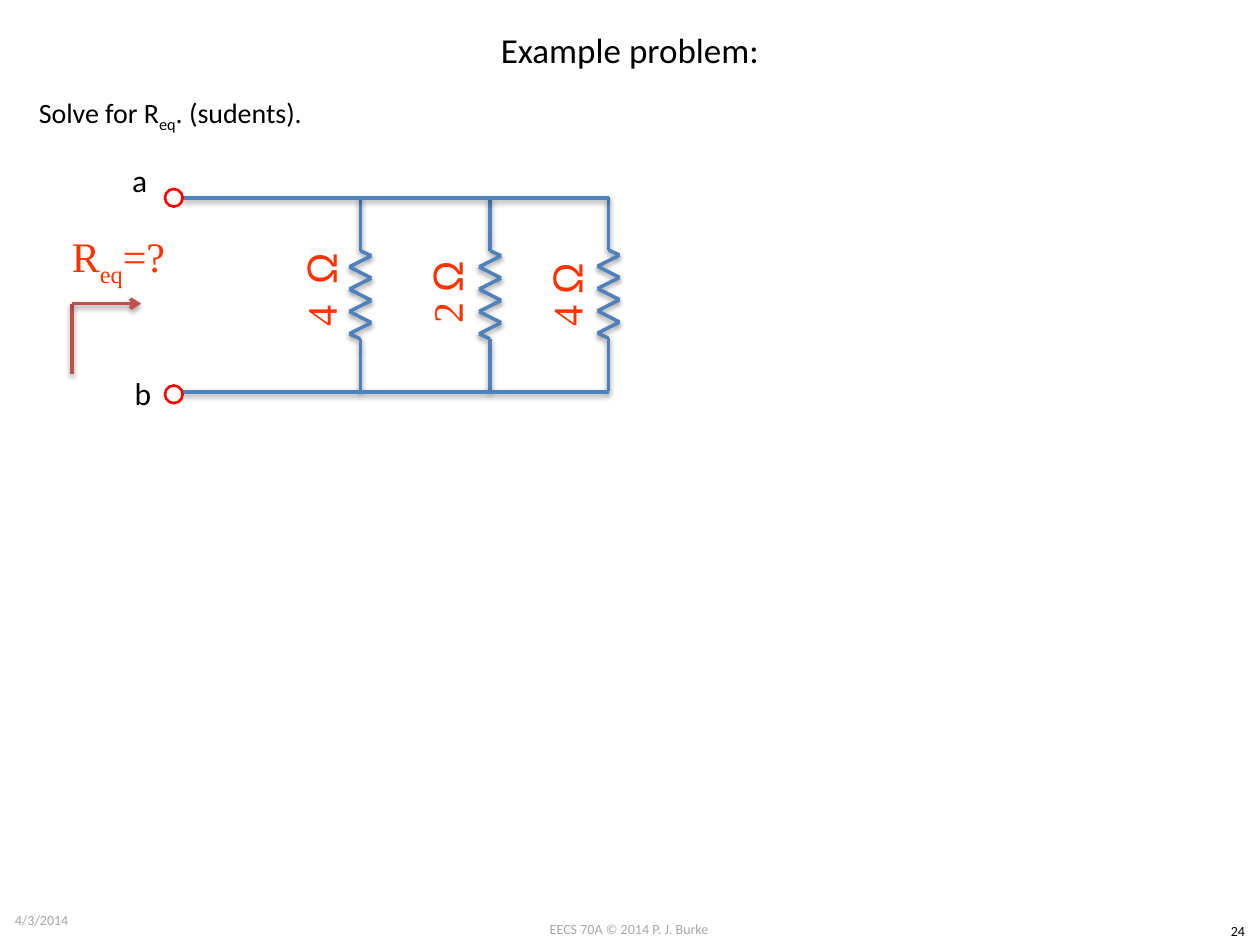
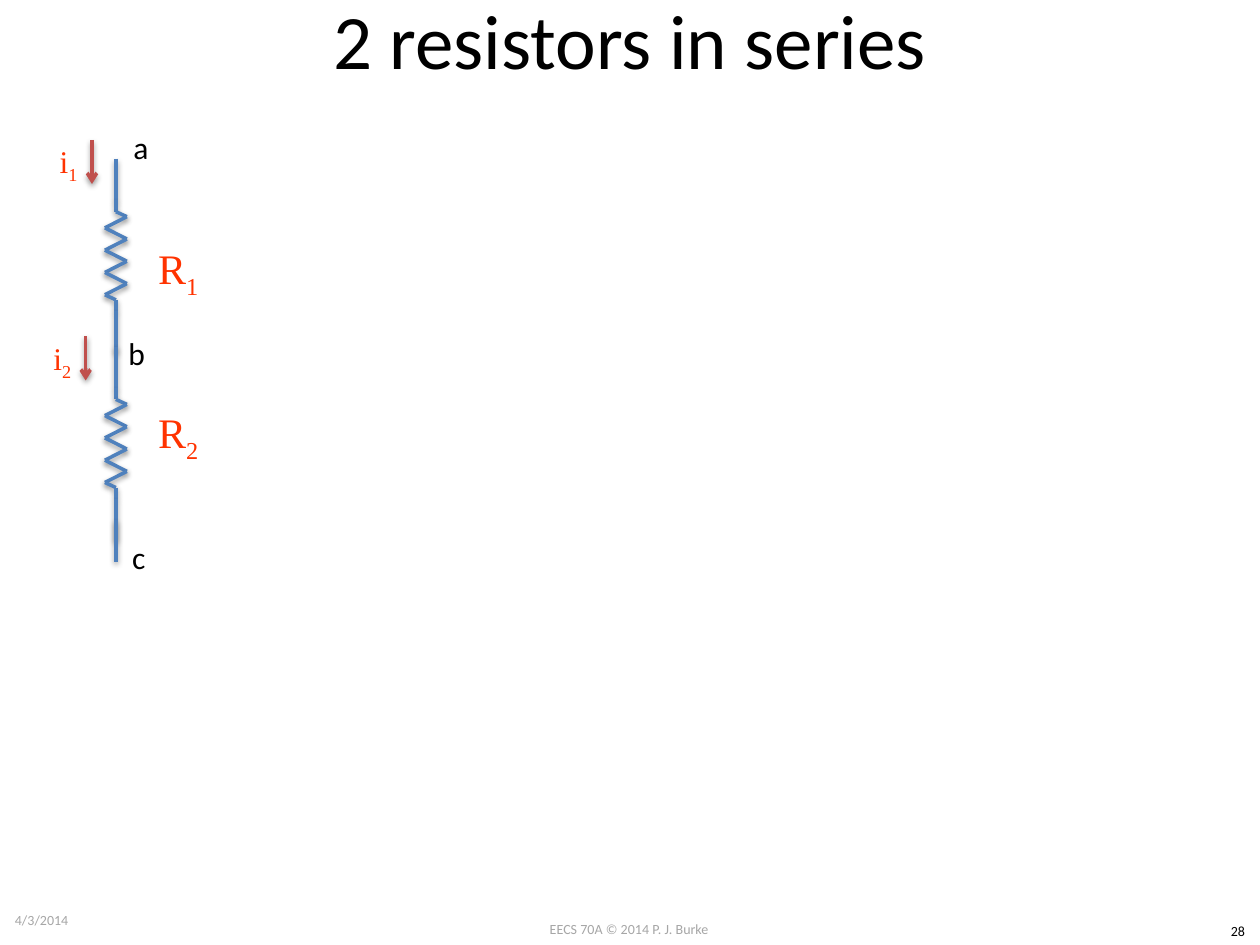
import pptx
import pptx.util
import pptx.dml.color
import pptx.enum.shapes
import pptx.enum.text
import pptx.oxml
import pptx.oxml.ns

RGBColor = pptx.dml.color.RGBColor
BLACK = RGBColor(0x00, 0x00, 0x00)
FOOTER_GREY = RGBColor(0xA6, 0xA6, 0xA6)
WIRE_BLUE = RGBColor(0x4F, 0x81, 0xBD)
ARROW_RED = RGBColor(0xC0, 0x50, 0x4D)
TERMINAL_RED = RGBColor(0xFF, 0x00, 0x00)
VALUE_ORANGE = RGBColor(0xFF, 0x33, 0x00)

BODY_FONT = "Calibri"
VALUE_FONT = "Times New Roman"
SYMBOL_FONT = "Arial"

LEFT = pptx.enum.text.PP_ALIGN.LEFT
CENTER = pptx.enum.text.PP_ALIGN.CENTER
TOP = pptx.enum.text.MSO_ANCHOR.TOP
MIDDLE = pptx.enum.text.MSO_ANCHOR.MIDDLE

deck = pptx.Presentation()
deck.slide_width = pptx.util.Inches(10)
deck.slide_height = pptx.util.Inches(7.5)

# The slide is a grid of 100 columns by 75 rows.
COL = deck.slide_width // 100
ROW = deck.slide_height // 75

SHADOW = (
    '<a:effectLst %s><a:outerShdw blurRad="40000" dist="20000" dir="5400000" '
    'rotWithShape="0"><a:srgbClr val="000000"><a:alpha val="38000"/></a:srgbClr>'
    "</a:outerShdw></a:effectLst>" % pptx.oxml.ns.nsdecls("a")
)
ARROWHEAD = '<a:tailEnd %s type="arrow"/>' % pptx.oxml.ns.nsdecls("a")


def add_wire(slide, start, end, color=WIRE_BLUE, arrow=False):
    """Draw a shadowed line between two (column, row) points."""
    wire = slide.shapes.add_connector(
        pptx.enum.shapes.MSO_CONNECTOR.STRAIGHT,
        round(start[0] * COL), round(start[1] * ROW),
        round(end[0] * COL), round(end[1] * ROW))
    wire.line.color.rgb = color
    wire.line.width = pptx.util.Pt(2)
    if arrow:
        wire.line._get_or_add_ln().append(pptx.oxml.parse_xml(ARROWHEAD))
    wire._element.spPr.append(pptx.oxml.parse_xml(SHADOW))


def add_label(slide, parts, box, size, color=BLACK, font=BODY_FONT,
              align=CENTER, anchor=MIDDLE, wrap=True, rotation=0):
    """Write parts in a box; a part that starts with "_" is a subscript."""
    col, row, cols, rows = box
    label = slide.shapes.add_textbox(
        round(col * COL), round(row * ROW), round(cols * COL), round(rows * ROW))
    label.rotation = rotation
    frame = label.text_frame
    frame.word_wrap = wrap
    frame.vertical_anchor = anchor
    paragraph = frame.paragraphs[0]
    paragraph.alignment = align
    for part in parts:
        run = paragraph.add_run()
        run.text = part.lstrip("_")
        run.font.name = SYMBOL_FONT if part == "Ω" else font
        run.font.size = pptx.util.Pt(size)
        run.font.color.rgb = color
        if part.startswith("_"):
            run._r.get_or_add_rPr().set("baseline", "-25000")


# Title and footer
pages = []
for title, title_box, title_size, number in [
    ("Example problem:", (5, 0, 90, 7.8), 20, "24"),
    ("2 resistors in series", (5, -3.2, 90, 12.5), 44, "28"),
]:
    page = deck.slides.add_slide(deck.slide_layouts[6])
    add_label(page, ["EECS 70A © 2014 P. J. Burke"], (38.3, 72.6, 23.3, 2.4), 8,
              FOOTER_GREY, anchor=TOP)
    add_label(page, [number], (96.5, 72.7, 3.5, 2.4), 8, anchor=TOP)
    add_label(page, ["4/3/2014"], (0.2, 71, 23.3, 4), 8, FOOTER_GREY, align=LEFT)
    add_label(page, [title], title_box, title_size)
    pages.append(page)
parallel, series = pages

# Resistors: a lead, eight alternating peaks, a lead
PEAK_REACH = 0.87
PEAK_STEP = 0.885
for page, col, top in [
    (parallel, 28.6, 15.7), (parallel, 38.9, 15.7), (parallel, 48.3, 15.65),
    (series, 9.2, 12.6), (series, 9.2, 27.5),
]:
    peaks = [(col + PEAK_REACH * (-1) ** i, top + 4.6 + PEAK_STEP * i)
             for i in range(8)]
    corners = [(col, top), (col, top + 3.3), (col, top + 4.2), *peaks,
               (col, top + 11.2), (col, top + 12.1), (col, top + 15.4)]
    for start, end in zip(corners, corners[1:]):
        add_wire(page, start, end)

# Parallel circuit: rails, terminals and values
add_label(parallel, ["Solve for R", "_eq", ". (sudents)."], (2.1, 7.1, 23.3, 3.7),
          16, align=LEFT, anchor=TOP, wrap=False)
for rail_row, terminal_row in [(15.7, 15), (31.1, 30.6)]:
    add_wire(parallel, (48.3, rail_row), (14.4, rail_row))
    terminal = parallel.shapes.add_shape(
        pptx.enum.shapes.MSO_SHAPE.OVAL, round(13.1 * COL),
        round(terminal_row * ROW), round(1.4 * COL), round(1.4 * ROW))
    terminal.shadow.inherit = False
    terminal.fill.background()
    terminal.line.color.rgb = TERMINAL_RED
    terminal.line.width = pptx.util.Pt(1.5)

for ohms, col, row in [("4  ", 20.4, 20.4), ("2 ", 30.4, 20.6), ("4 ", 39.9, 20.8)]:
    add_label(parallel, [ohms, "Ω"], (col, row, 10, 5.2), 24, VALUE_ORANGE,
              VALUE_FONT, rotation=270)

add_wire(parallel, (5.7, 29.7), (5.7, 24.1), ARROW_RED)
add_wire(parallel, (5.7, 24.1), (11.2, 24.1), ARROW_RED, arrow=True)
add_label(parallel, ["R", "_eq", "=?"], (4.4, 18, 10, 5.2), 24, VALUE_ORANGE,
          VALUE_FONT)

# Series circuit: end lead, resistor names and currents
add_wire(series, (9.2, 44.6), (9.2, 41.3))
for index, name_row, arrow_col, arrow_row in [
    ("_1", 17.9, 7.3, 11.1), ("_2", 30.9, 6.8, 26.7),
]:
    add_label(series, ["R", index], (8.2, name_row, 11.9, 7.3), 24, VALUE_ORANGE,
              VALUE_FONT)
    add_wire(series, (arrow_col, arrow_row), (arrow_col, arrow_row + 3.5),
             ARROW_RED, arrow=True)
    add_label(series, ["i", index], (arrow_col - 6.5, arrow_row - 0.7, 9.3, 5.2),
              18, VALUE_ORANGE, VALUE_FONT)

# Node letters
for page, node, col, row, cols in [
    (parallel, "a", 9.5, 12.3, 3.2), (parallel, "b", 9.7, 29.2, 3.4),
    (series, "a", 9.6, 9.7, 3.2), (series, "b", 9.2, 26, 3.4),
    (series, "c", 9.5, 42.2, 3.1),
]:
    add_label(page, [node], (col, row, cols, 4), 18, align=LEFT, anchor=TOP,
              wrap=False)

deck.save("out.pptx")
